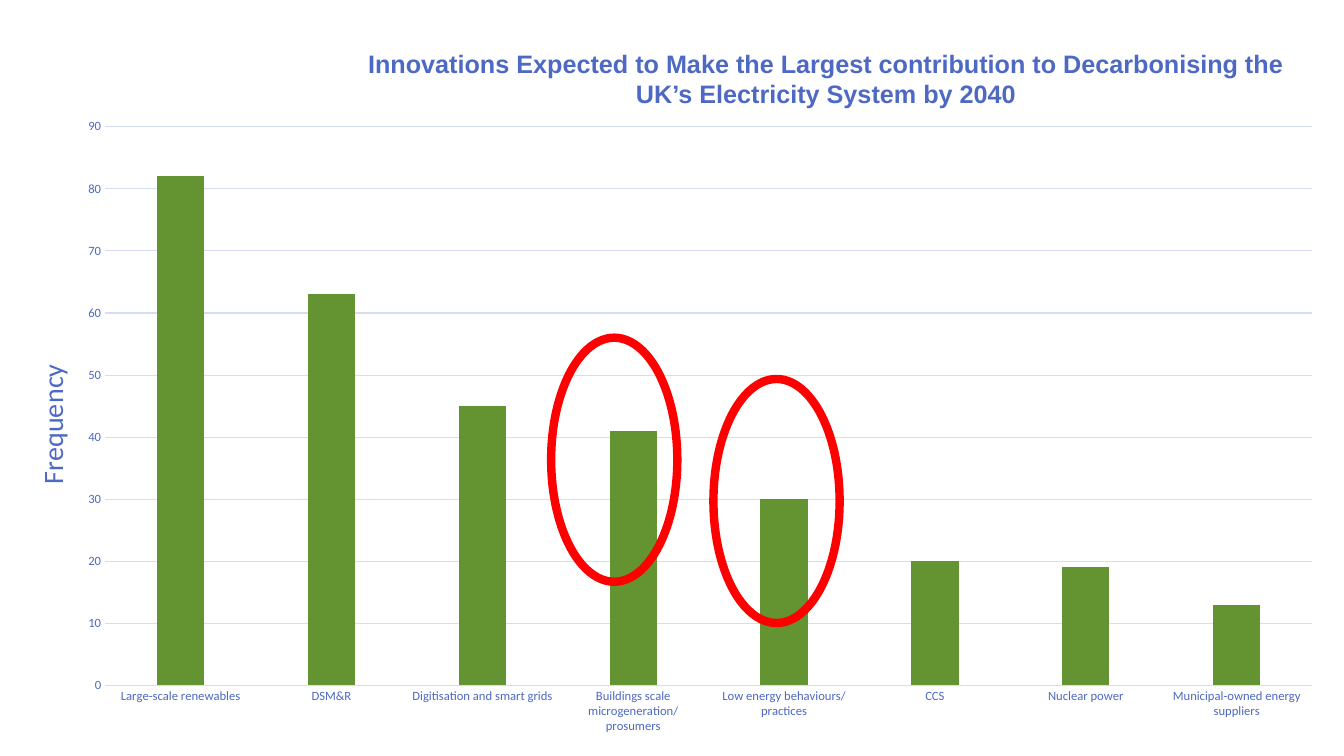
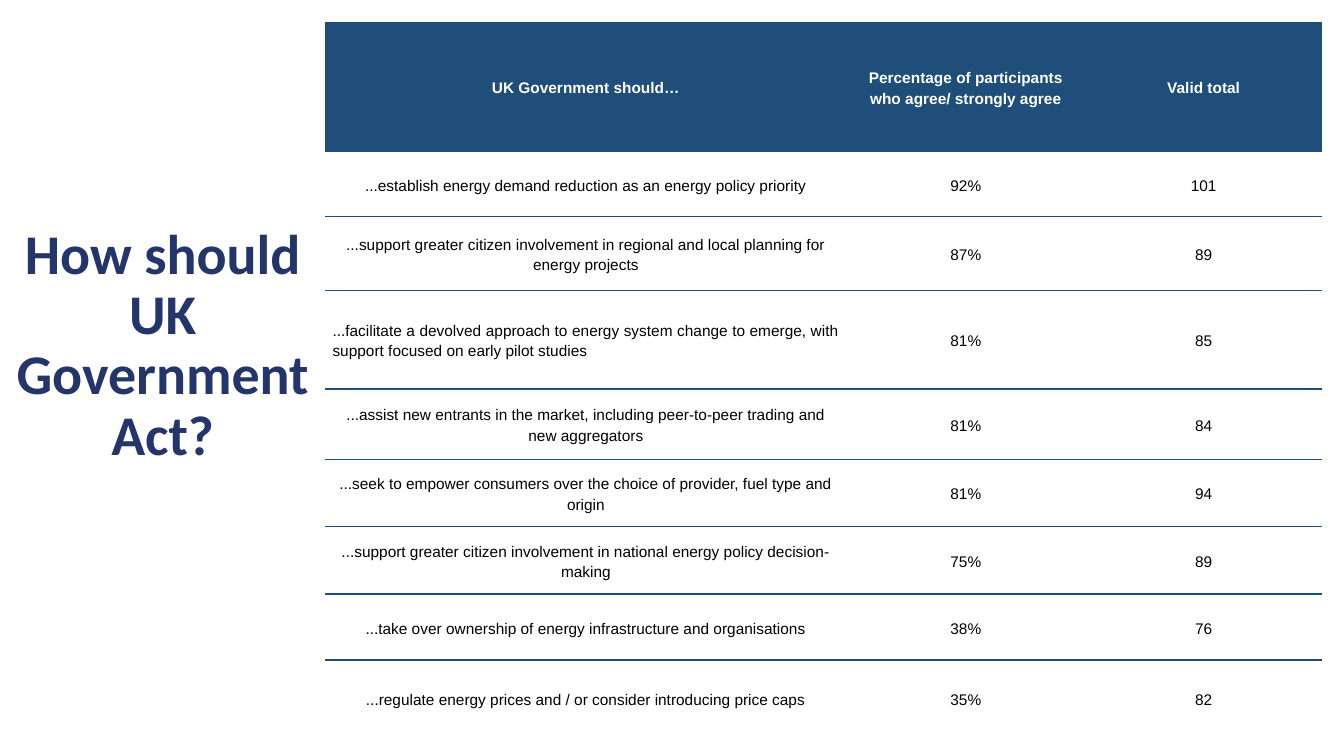
from lxml.etree import SubElement
from pptx import Presentation
from pptx.chart.data import CategoryChartData
from pptx.dml.color import RGBColor
from pptx.enum.chart import XL_CHART_TYPE, XL_TICK_MARK
from pptx.enum.shapes import MSO_SHAPE
from pptx.enum.text import MSO_ANCHOR, MSO_AUTO_SIZE, PP_ALIGN
from pptx.oxml import parse_xml
from pptx.oxml.ns import nsdecls, qn
from pptx.util import Cm, Pt

NAVY = RGBColor(0x24, 0x35, 0x6B)
BLUE = RGBColor(0x4D, 0x69, 0xC3)
PALE = RGBColor(0xD6, 0xDC, 0xF1)
GREEN = RGBColor(0x63, 0x94, 0x31)
RED = RGBColor(0xFF, 0x00, 0x00)
TEAL = RGBColor(0x1E, 0x4E, 0x79)
WHITE = RGBColor(0xFF, 0xFF, 0xFF)
BLACK = RGBColor(0x00, 0x00, 0x00)

AXIS = dict(name="Calibri", size=Pt(9), color=BLUE, bold=False)
AXIS_TITLE = dict(AXIS, size=Pt(20))
CHART_TITLE = dict(name="Arial", size=Pt(18), color=BLUE, bold=True)
SLIDE_TITLE = dict(name="Calibri", size=Pt(40), color=NAVY, bold=True)
HEAD = dict(name="Arial", size=Pt(11), color=WHITE, bold=True)
BODY = dict(HEAD, color=BLACK, bold=False)
NO_STYLE = "{2D5ABB26-0587-4C30-8999-92F81FD0307C}"


def style(font, fmt):
    for key, value in fmt.items():
        if key == "color":
            font.color.rgb = value
        else:
            setattr(font, key, value)


def set_layout(parent, **values):
    """Give a chart part a manual position, in fractions of the chart."""
    layout = parent.find(qn("c:layout"))
    if layout is None:
        layout = parse_xml(f"<c:layout {nsdecls('c')}/>")
        parent.insert(0, layout)
    manual = SubElement(layout, qn("c:manualLayout"))
    for key, value in values.items():
        SubElement(manual, qn(f"c:{key}")).set("val", str(value))


prs = Presentation()
prs.slide_width, prs.slide_height = Cm(33.87), Cm(19.05)
blank = prs.slide_layouts[6]

# Slide 1: column chart
s = prs.slides.add_slide(blank)
data = CategoryChartData()
data.categories = [
    "Large-scale renewables", "DSM&R", "Digitisation and smart grids",
    "Buildings scale microgeneration/ prosumers",
    "Low energy behaviours/ practices", "CCS", "Nuclear power",
    "Municipal-owned energy suppliers",
]
data.add_series("Series 1", [82, 63, 45, 41, 30, 20, 19, 13])
chart = s.shapes.add_chart(XL_CHART_TYPE.COLUMN_CLUSTERED, Cm(0.36), Cm(2.72),
                           Cm(32.72), Cm(15.82), data).chart
chart.has_legend = chart.has_title = False
style(chart.font, dict(name="Calibri", size=Pt(10), color=NAVY))

plot = chart.plots[0]
plot.gap_width, plot.overlap, plot.vary_by_categories = 219, -27, False
fill = plot.series[0].format.fill
fill.solid()
fill.fore_color.rgb = GREEN
set_layout(chart._chartSpace.chart.plotArea, layoutTarget="inner", xMode="edge",
           yMode="edge", x=0.07, y=0.03, w=0.93, h=0.89)

# Axes
cat, val = chart.category_axis, chart.value_axis
val.minimum_scale, val.maximum_scale, val.major_unit = 0, 90, 10
val.has_major_gridlines = True
for axis in (cat, val):
    axis.major_tick_mark = axis.minor_tick_mark = XL_TICK_MARK.NONE
    style(axis.tick_labels.font, AXIS)
for line in (cat.format.line, val.major_gridlines.format.line):
    line.color.rgb = PALE
    line.width = Pt(0.75)
val.format.line.fill.background()
tf = val.axis_title.text_frame
tf._txBody.bodyPr.set("rot", "-5400000")
tf._txBody.bodyPr.set("vert", "horz")
r = tf.paragraphs[0].add_run()
r.text = "Frequency"
style(r.font, AXIS_TITLE)
set_layout(val.axis_title._element, xMode="edge", yMode="edge", x=0.01, y=0.4)

# Highlight rings
for left, top in ((17.98, 9.55), (13.89, 8.51)):
    sp = s.shapes.add_shape(MSO_SHAPE.OVAL, Cm(left), Cm(top), Cm(3.18), Cm(6.15))
    sp.shadow.inherit = False
    sp.fill.background()
    sp.line.color.rgb = RED
    sp.line.width = Pt(6)

# Slide 2: table
s2 = prs.slides.add_slide(blank)
rows = [
    ("UK Government should…",
     "Percentage of participants who agree/ strongly agree", "Valid total"),
    ("...establish energy demand reduction as an energy policy priority", "92%", "101"),
    ("...support greater citizen involvement in regional and local planning for "
     "energy projects", "87%", "89"),
    ("...facilitate a devolved approach to energy system change to emerge, with "
     "support focused on early pilot studies", "81%", "85"),
    ("...assist new entrants in the market, including peer-to-peer trading and "
     "new aggregators", "81%", "84"),
    ("...seek to empower consumers over the choice of provider, fuel type and "
     "origin", "81%", "94"),
    ("...support greater citizen involvement in national energy policy "
     "decision-making", "75%", "89"),
    ("...take over ownership of energy infrastructure and organisations", "38%", "76"),
    ("...regulate energy prices and / or consider introducing price caps", "35%", "82"),
]
widths = [13.13, 6.02, 5.97]
heights = [3.25, 1.65, 1.85, 2.49, 1.77, 1.7, 1.7, 1.66, 1.93]
JUSTIFIED_ROW = 3
table = s2.shapes.add_table(len(rows), len(widths), Cm(8.2), Cm(0.56),
                            Cm(sum(widths)), Cm(sum(heights))).table
table._tbl.tblPr.find(qn("a:tableStyleId")).text = NO_STYLE
for col, width in zip(table.columns, widths):
    col.width = Cm(width)
for i, (texts, height) in enumerate(zip(rows, heights)):
    table.rows[i].height = Cm(height)
    for j, text in enumerate(texts):
        cell = table.cell(i, j)
        cell.margin_left = cell.margin_right = Cm(0.18)
        cell.margin_top = cell.margin_bottom = 0
        cell.vertical_anchor = MSO_ANCHOR.MIDDLE
        if i == 0:
            cell.fill.solid()
            cell.fill.fore_color.rgb = TEAL
        else:
            cell.fill.background()
        p = cell.text_frame.paragraphs[0]
        justified = (i, j) == (JUSTIFIED_ROW, 0)
        p.alignment = PP_ALIGN.JUSTIFY if justified else PP_ALIGN.CENTER
        p.line_spacing = 1.2
        r = p.add_run()
        r.text = text
        style(r.font, BODY if i else HEAD)
        # Rule below every row but the last
        if i < len(rows) - 1:
            cell._tc.get_or_add_tcPr().insert(0, parse_xml(
                f'<a:lnB {nsdecls("a")} w="{Pt(1)}"><a:solidFill>'
                f'<a:srgbClr val="{TEAL}"/></a:solidFill></a:lnB>'))

# Titles of both slides
titles = [
    (s, (8.56, 1.09, 24.51, 1.8), CHART_TITLE, MSO_ANCHOR.TOP, 1.0,
     MSO_AUTO_SIZE.SHAPE_TO_FIT_TEXT,
     "Innovations Expected to Make the Largest contribution to Decarbonising "
     "the UK’s Electricity System by 2040"),
    (s2, (0, 5.05, 8.2, 7.37), SLIDE_TITLE, MSO_ANCHOR.MIDDLE, 0.9,
     MSO_AUTO_SIZE.NONE, "How should UK Government Act?"),
]
for slide, box, fmt, anchor, spacing, fit, text in titles:
    tf = slide.shapes.add_textbox(*map(Cm, box)).text_frame
    tf.word_wrap, tf.auto_size, tf.vertical_anchor = True, fit, anchor
    p = tf.paragraphs[0]
    p.alignment, p.line_spacing = PP_ALIGN.CENTER, spacing
    r = p.add_run()
    r.text = text
    style(r.font, fmt)

prs.save("out.pptx")
